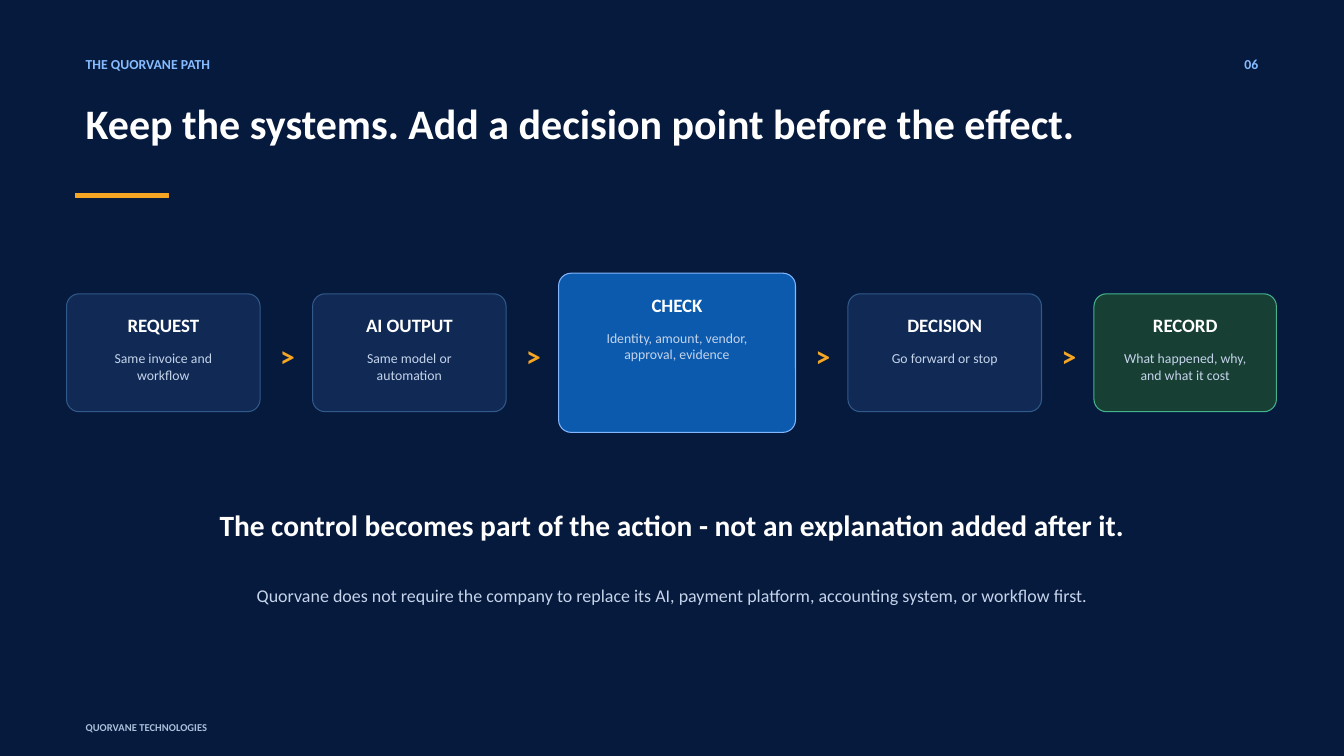
from dataclasses import dataclass

from pptx import Presentation
from pptx.dml.color import RGBColor
from pptx.enum import shapes, text
from pptx.shapes.autoshape import Shape
from pptx.slide import Slide
from pptx.util import Inches, Pt

NAVY = RGBColor(0x06, 0x1A, 0x3D)
WHITE = RGBColor(0xFF, 0xFF, 0xFF)
SKY = RGBColor(0x86, 0xBC, 0xFF)
AMBER = RGBColor(0xF5, 0xA6, 0x23)
MIST = RGBColor(0xC6, 0xD4, 0xEB)
SLATE = RGBColor(0xA9, 0xBF, 0xDA)
PANEL = RGBColor(0x10, 0x2A, 0x55)
STEEL = RGBColor(0x31, 0x59, 0x89)
BLUE = RGBColor(0x0B, 0x5A, 0xAE)
PALE = RGBColor(0x82, 0xB7, 0xFF)
PINE = RGBColor(0x17, 0x3F, 0x34)
MINT = RGBColor(0x43, 0xB4, 0x8D)

FONT = "Calibri"
LEFT, MID, RIGHT = text.PP_ALIGN.LEFT, text.PP_ALIGN.CENTER, text.PP_ALIGN.RIGHT
START, GAP, AXIS = 0.66, 0.52, 3.5
RADIUS, PAD = 0.125, 0.17


@dataclass(frozen=True)
class Box:
    left: float
    top: float
    width: float
    height: float


@dataclass(frozen=True)
class Style:
    size: float
    color: RGBColor
    bold: bool = True
    align: text.PP_ALIGN = MID


@dataclass(frozen=True)
class Step:
    name: str
    detail: str
    width: float = 1.92
    height: float = 1.17
    fill: RGBColor = PANEL
    edge: RGBColor = STEEL


@dataclass(frozen=True)
class Label:
    words: str
    box: Box
    style: Style


NAME = Style(13.5, WHITE)
DETAIL = Style(9.8, MIST, bold=False)
ARROW = Style(21, AMBER)
TITLE = Style(30, WHITE, align=LEFT)

STEPS = [
    Step("REQUEST", "Same invoice and workflow"),
    Step("AI OUTPUT", "Same model or automation"),
    Step("CHECK", "Identity, amount, vendor, approval, evidence",
         2.35, 1.58, BLUE, PALE),
    Step("DECISION", "Go forward or stop"),
    Step("RECORD", "What happened, why, and what it cost",
         width=1.81, fill=PINE, edge=MINT),
]

LABELS = [
    Label("THE QUORVANE PATH", Box(0.75, 0.5, 7.92, 0.25),
          Style(9.8, SKY, align=LEFT)),
    Label("06", Box(12.08, 0.5, 0.5, 0.25), Style(9.8, SKY, align=RIGHT)),
    Label("The control becomes part of the action - not an explanation "
          "added after it.", Box(1.04, 4.98, 11.25, 0.6), Style(21, WHITE)),
    Label("Quorvane does not require the company to replace its AI, payment "
          "platform, accounting system, or workflow first.",
          Box(1.31, 5.75, 10.71, 0.54), Style(12.8, MIST, bold=False)),
    Label("QUORVANE TECHNOLOGIES", Box(0.75, 7.1, 4.38, 0.19),
          Style(7.5, SLATE, align=LEFT)),
]


def place(shape: Shape, box: Box) -> None:
    shape.left, shape.top = Inches(box.left), Inches(box.top)
    shape.width, shape.height = Inches(box.width), Inches(box.height)


def write(shape: Shape, words: str, style: Style) -> None:
    frame = shape.text_frame
    frame.word_wrap = True
    frame.auto_size = text.MSO_AUTO_SIZE.NONE
    frame.vertical_anchor = text.MSO_ANCHOR.TOP
    para = frame.paragraphs[0]
    para.text = words
    para.alignment = style.align
    para.font.name = FONT
    para.font.size = Pt(style.size)
    para.font.bold = style.bold
    para.font.color.rgb = style.color


def add_text(slide: Slide, words: str, box: Box, style: Style) -> None:
    shape = slide.shapes.add_textbox(0, 0, 0, 0)
    place(shape, box)
    write(shape, words, style)


def add_panel(slide: Slide, kind: shapes.MSO_SHAPE, box: Box,
              fill: RGBColor, edge: RGBColor, weight: float) -> Shape:
    shape = slide.shapes.add_shape(kind, 0, 0, 0, 0)
    place(shape, box)
    shape.shadow.inherit = False
    shape.fill.solid()
    shape.fill.fore_color.rgb = fill
    shape.line.color.rgb = edge
    shape.line.width = Pt(weight)
    return shape


def add_step(slide: Slide, step: Step, left: float) -> None:
    top = AXIS - step.height / 2
    card = add_panel(slide, shapes.MSO_SHAPE.ROUNDED_RECTANGLE,
                     Box(left, top, step.width, step.height),
                     step.fill, step.edge, 0.75)
    card.adjustments[0] = RADIUS / step.height
    inner = step.width - 2 * PAD
    add_text(slide, step.name, Box(left + PAD, top + 0.15, inner, 0.31), NAME)
    add_text(slide, step.detail,
             Box(left + PAD, top + 0.51, inner, step.height - 0.61), DETAIL)


def main() -> None:
    deck = Presentation()
    deck.slide_width, deck.slide_height = Inches(13.33), Inches(7.5)
    slide = deck.slides.add_slide(deck.slide_layouts.get_by_name("Title Only"))
    slide.background.fill.solid()
    slide.background.fill.fore_color.rgb = NAVY

    title = slide.shapes.title
    place(title, Box(0.75, 0.92, 11.83, 0.96))
    write(title, "Keep the systems. Add a decision point before the effect.",
          TITLE)
    add_panel(slide, shapes.MSO_SHAPE.RECTANGLE, Box(0.75, 1.92, 0.92, 0.04),
              AMBER, AMBER, 0)

    left = START
    for step in STEPS:
        if left > START:
            add_text(slide, ">", Box(left - 0.42, 3.31, 0.31, 0.4), ARROW)
        add_step(slide, step, left)
        left += step.width + GAP

    for label in LABELS:
        add_text(slide, label.words, label.box, label.style)
    deck.save("out.pptx")


if __name__ == "__main__":
    main()
